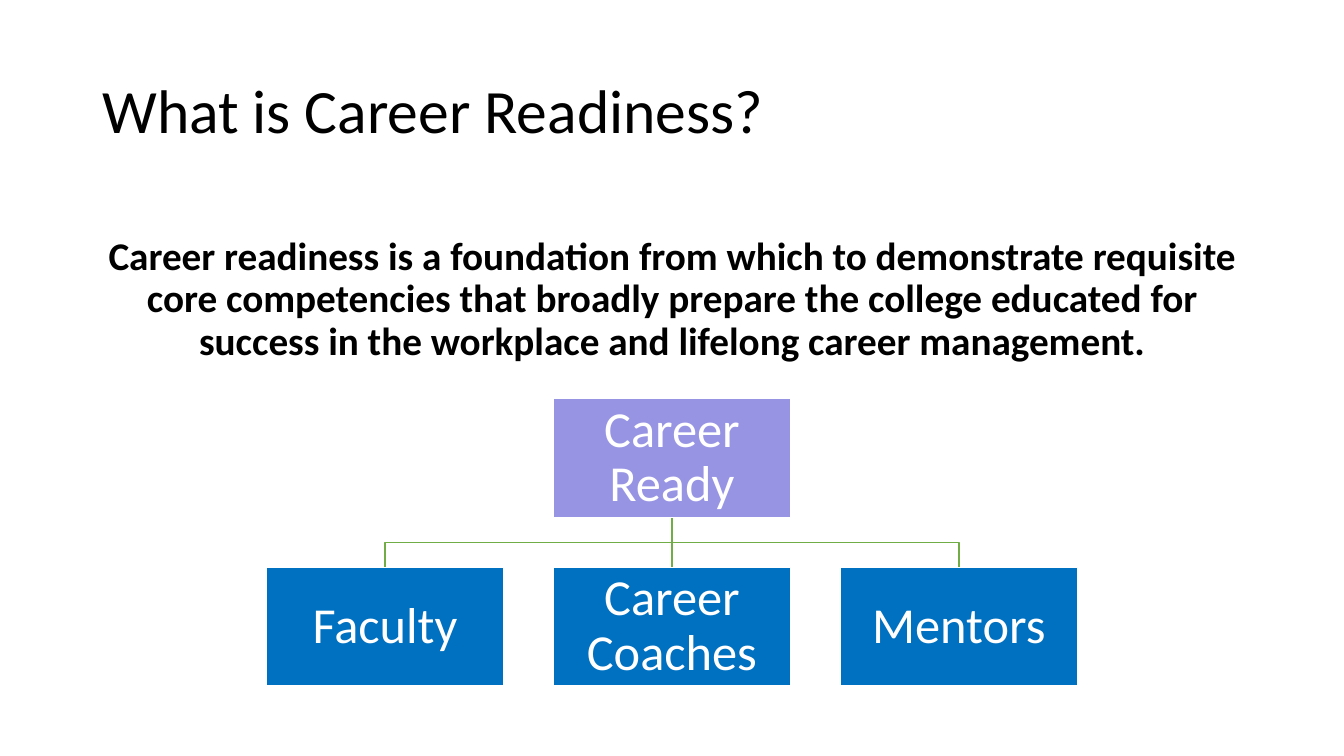
from pptx import Presentation
from pptx.dml.color import RGBColor
from pptx.enum.shapes import MSO_CONNECTOR, MSO_SHAPE
from pptx.enum.text import MSO_ANCHOR, PP_ALIGN
from pptx.oxml.ns import qn
from pptx.util import Cm, Pt

RECT = MSO_SHAPE.RECTANGLE
STRAIGHT = MSO_CONNECTOR.STRAIGHT
TOP, MIDDLE = MSO_ANCHOR.TOP, MSO_ANCHOR.MIDDLE
LEFT, CENTER = PP_ALIGN.LEFT, PP_ALIGN.CENTER

TITLE = "What is Career Readiness?"
BODY = (
    "Career readiness is a foundation from which to demonstrate requisite "
    "core competencies that broadly prepare the college educated for "
    "success in the workplace and lifelong career management."
)
ROOT = "Career Ready"
TEAM = ["Faculty", "Career Coaches", "Mentors"]

BLACK, WHITE = "000000", "FFFFFF"
LILAC, BLUE, GREEN = "9894E4", "0070C0", "70AD47"

WIDE, HIGH = 33.87, 19.05
MARGIN, SPAN = 2.33, 29.21
BOX_W, BOX_H = 5.97, 2.99
STEP = 7.23
ROOT_Y, TEAM_Y = 10.05, 14.3
MID = WIDE / 2


def rgb(code):
    return RGBColor.from_string(code)


def write(shape, text, size, color, align, anchor, bold=False):
    frame = shape.text_frame
    frame.word_wrap = True
    frame.vertical_anchor = anchor
    para = frame.paragraphs[0]
    para.text = text
    para.alignment = align
    para.line_spacing = 0.9
    font = para.font
    font.name, font.size, font.bold = "Calibri", Pt(size), bold
    font.color.rgb = rgb(color)
    return frame


def add_text(slide, top, height, *style):
    box = slide.shapes.add_textbox(Cm(MARGIN), Cm(top), Cm(SPAN), Cm(height))
    return write(box, *style)


def add_node(slide, text, mid, top, fill):
    """Draw one chart box centred on mid."""
    node = slide.shapes.add_shape(
        RECT, Cm(mid - BOX_W / 2), Cm(top), Cm(BOX_W), Cm(BOX_H))
    node.shadow.inherit = False
    node.fill.solid()
    node.fill.fore_color.rgb = rgb(fill)
    node.line.color.rgb = rgb(WHITE)
    node.line.width = Pt(1)
    frame = write(node, text, 36, WHITE, CENTER, MIDDLE)
    frame.margin_left = frame.margin_right = Cm(0.08)
    frame.margin_top = frame.margin_bottom = Cm(0.08)


def add_link(slide, end):
    """Join the root to the box centred on end, bending halfway down."""
    start_y = ROOT_Y + BOX_H
    bend = (start_y + TEAM_Y) / 2
    if end == MID:
        link = slide.shapes.add_connector(
            STRAIGHT, Cm(MID), Cm(start_y), Cm(end), Cm(TEAM_Y))
        props = link._element.spPr
        props.append(props.makeelement(qn("a:effectLst"), {}))
    else:
        route = [(MID, bend), (end, bend), (end, TEAM_Y)]
        pen = slide.shapes.build_freeform(Cm(MID), Cm(start_y))
        pen.add_line_segments([(Cm(x), Cm(y)) for x, y in route], close=False)
        link = pen.convert_to_shape()
        link.shadow.inherit = False
        link.fill.background()
    link.line.color.rgb = rgb(GREEN)
    link.line.width = Pt(1)


def main():
    deck = Presentation()
    deck.slide_width, deck.slide_height = Cm(WIDE), Cm(HIGH)
    slide = deck.slides.add_slide(deck.slide_layouts[6])

    add_text(slide, 1.01, 3.68, TITLE, 44, BLACK, LEFT, MIDDLE)
    body = add_text(slide, 5.84, 5.51, BODY, 28, BLACK, CENTER, TOP, True)
    body.paragraphs[0].space_before = Pt(10)

    mids = [MID + (i - len(TEAM) // 2) * STEP for i in range(len(TEAM))]
    for mid in mids:
        add_link(slide, mid)
    add_node(slide, ROOT, MID, ROOT_Y, LILAC)
    for name, mid in zip(TEAM, mids):
        add_node(slide, name, mid, TEAM_Y, BLUE)

    deck.save("out.pptx")


if __name__ == "__main__":
    main()
